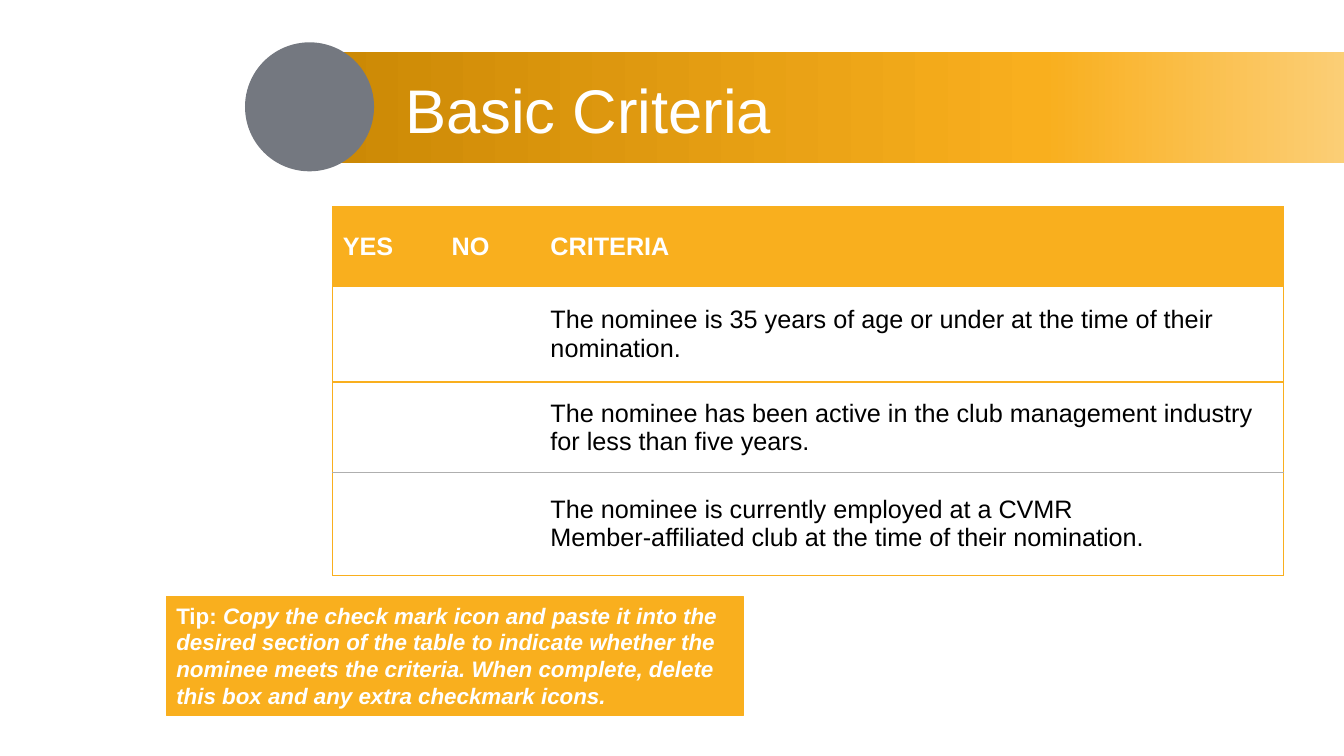
import pptx
import pptx.dml.color
import pptx.enum.shapes
import pptx.enum.text
import pptx.oxml.ns
import pptx.util
from lxml import etree

RGBColor = pptx.dml.color.RGBColor
MIDDLE = pptx.enum.text.MSO_ANCHOR.MIDDLE
SHAPES = pptx.enum.shapes.MSO_SHAPE
PX = 9144  # 100 px to the inch

GOLD = RGBColor(0xF9, 0xAF, 0x1E)
PALE_GOLD = RGBColor(0xFE, 0xEF, 0xD2)
DARK_GOLD = RGBColor(0xCC, 0x89, 0x05)
SLATE = RGBColor(0x74, 0x78, 0x80)
RULE_GRAY = RGBColor(0xAF, 0xAF, 0xAF)
WHITE = RGBColor(0xFF, 0xFF, 0xFF)
BLACK = RGBColor(0, 0, 0)


def add_span(para, text, size, color, **formats):
    span = para.add_run()
    span.text = text
    span.font.color.rgb = color
    formats = {"name": "Arial", "size": pptx.util.Pt(size), **formats}
    for name, value in formats.items():
        setattr(span.font, name, value)


def add_element(parent, tag, **attributes):
    return etree.SubElement(parent, pptx.oxml.ns.qn(tag), attributes)


deck = pptx.Presentation()
deck.slide_width, deck.slide_height = 1333 * PX, 750 * PX
page = deck.slides.add_slide(deck.slide_layouts[6])

# Title band
bar, disc, tip = [
    page.shapes.add_shape(kind, *[length * PX for length in place])
    for kind, place in (
        (SHAPES.RECTANGLE, (331, 52, 1306, 110)),
        (SHAPES.OVAL, (243, 42, 128, 128)),
        (SHAPES.RECTANGLE, (165, 592, 572, 118)),
    )
]
for shape, color in ((bar, GOLD), (disc, SLATE), (tip, GOLD)):
    shape.shadow.inherit = False
    shape.fill.solid()
    shape.fill.fore_color.rgb = color
    shape.line.fill.background()

bar.fill.gradient()
bar.fill.gradient_angle = 180
stops = bar._element.spPr.find(".//" + pptx.oxml.ns.qn("a:gsLst"))
stops.clear()
for percent, color in ((0, PALE_GOLD), (46, GOLD), (100, DARK_GOLD)):
    stop = add_element(stops, "a:gs", pos=str(percent * 1000))
    add_element(stop, "a:srgbClr", val=str(color))

title = page.shapes.add_textbox(392 * PX, 40 * PX, 850 * PX, 145 * PX).text_frame
title.word_wrap = True
title.vertical_anchor = MIDDLE
title.paragraphs[0].line_spacing = 0.9
add_span(title.paragraphs[0], "Basic Criteria", 44, WHITE)

# Criteria table
rows = [
    ("YES", "NO", "CRITERIA"),
    ("", "", "The nominee is 35 years of age or under at the time of their nomination."),
    ("", "", "The nominee has been active in the club management industry for less than five years."),
    ("", "", "The nominee is currently employed at a CVMR\n"
             "Member-affiliated club at the time of their nomination."),
]
widths = [108, 98, 737]
heights = [79, 95, 90, 102]
rule_colors = [GOLD, GOLD, GOLD, RULE_GRAY, GOLD]
table = page.shapes.add_table(
    len(rows), len(widths), 330 * PX, 205 * PX, sum(widths) * PX, sum(heights) * PX
).table
table.horz_banding = False
for column, width in zip(table.columns, widths):
    column.width = width * PX
for row_index, texts in enumerate(rows):
    table.rows[row_index].height = heights[row_index] * PX
    header = row_index == 0
    for column_index, text in enumerate(texts):
        cell = table.cell(row_index, column_index)
        cell.vertical_anchor = MIDDLE
        borders = {
            "a:lnL": GOLD if column_index == 0 else None,
            "a:lnR": GOLD if column_index == len(widths) - 1 else None,
            "a:lnT": rule_colors[row_index],
            "a:lnB": rule_colors[row_index + 1],
        }
        properties = cell._tc.get_or_add_tcPr()
        for tag, color in borders.items():
            border = add_element(properties, tag, w=str(pptx.util.Pt(1)))
            if color is None:
                add_element(border, "a:noFill")
            else:
                add_element(add_element(border, "a:solidFill"), "a:srgbClr", val=str(color))
        if header:
            cell.fill.solid()
            cell.fill.fore_color.rgb = GOLD
        else:
            cell.fill.background()
        if text:
            for line_index, line in enumerate(text.split("\n")):
                frame = cell.text_frame
                para = frame.add_paragraph() if line_index else frame.paragraphs[0]
                add_span(para, line, 18, WHITE if header else BLACK, bold=header)

# Tip box
tip.line.color.rgb = GOLD
tip.line.width = pptx.util.Pt(0.75)
tip.text_frame.word_wrap = True
tip.text_frame.vertical_anchor = pptx.enum.text.MSO_ANCHOR.TOP
tip_para = tip.text_frame.paragraphs[0]
tip_para.alignment = pptx.enum.text.PP_ALIGN.LEFT
add_span(tip_para, "Tip: ", 16, WHITE, bold=True)
add_span(
    tip_para,
    "Copy the check mark icon and paste it into the desired section of the table to indicate "
    "whether the nominee meets the criteria. When complete, delete this box and any extra "
    "checkmark icons.",
    16, WHITE, bold=True, italic=True,
)

deck.save("out.pptx")
